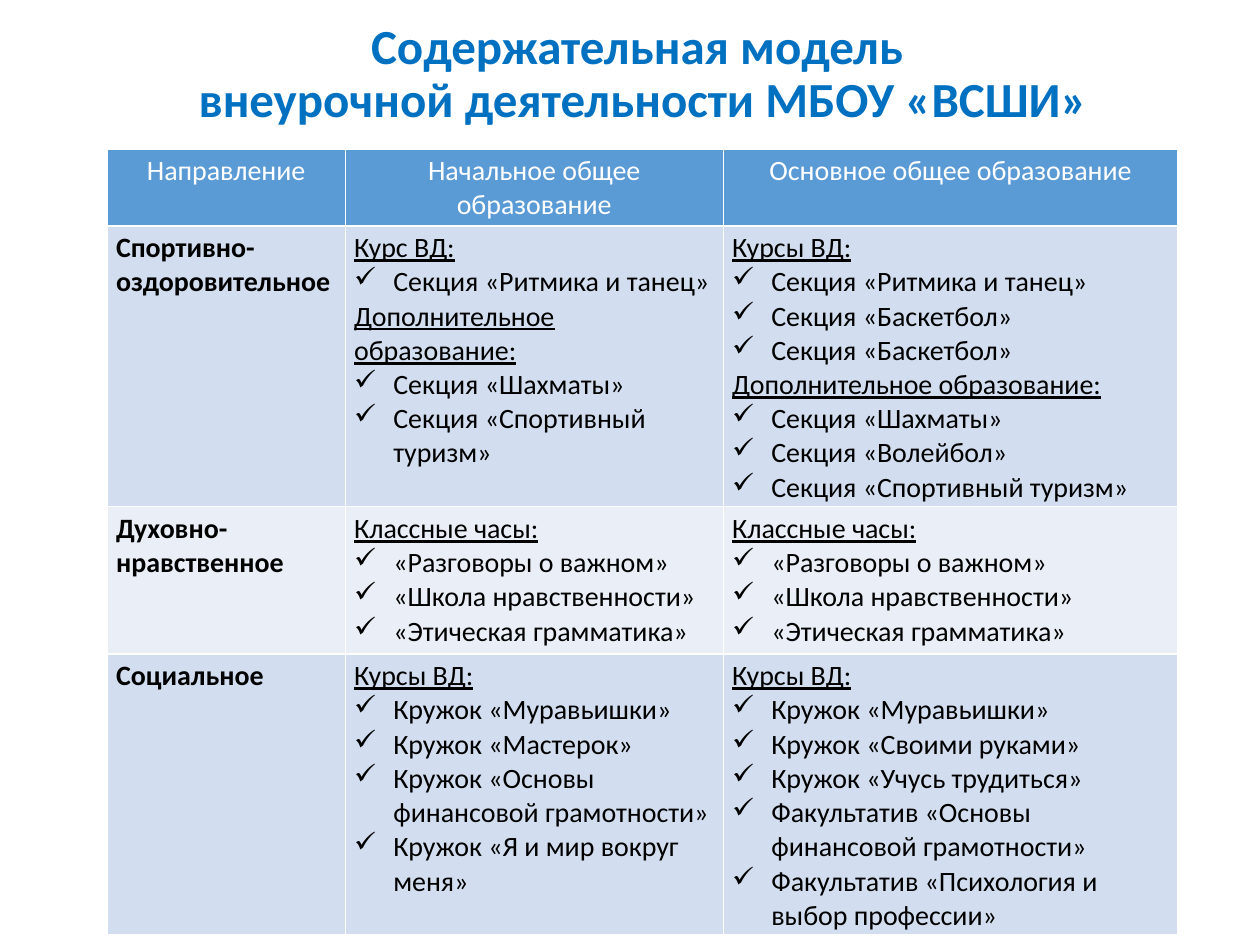
"""Build the slide with the table of extracurricular activities by school level."""

from dataclasses import dataclass, field

import lxml.etree
import pptx
import pptx.dml.color
import pptx.enum.text
import pptx.oxml.ns
import pptx.slide
import pptx.table
import pptx.text.text
import pptx.util

Cm = pptx.util.Cm
Align = pptx.enum.text.PP_ALIGN


@dataclass(frozen=True)
class Theme:
    font: str = "Calibri"
    title_size: int = 28
    table_size: int = 16
    title: str = "0070C0"
    header_text: str = "FFFFFF"
    text: str = "000000"
    header_fill: str = "5B9BD5"
    band_fills: tuple[str, str] = ("D2DEEF", "EAEFF7")


@dataclass(frozen=True)
class Group:
    heading: str
    items: list[str] = field(default_factory=list)


@dataclass(frozen=True)
class Direction:
    name: str
    height: float
    primary: list[Group]
    secondary: list[Group]


THEME = Theme()
TITLE_LINES = ["Содержательная модель ", "внеурочной деятельности МБОУ «ВСШИ»"]
HEADERS = ["Направление", "Начальное общее образование", "Основное общее образование"]
COLUMN_WIDTHS = [4.8, 7.62, 9.17]
HEADER_HEIGHT = 1.03
INDENT = 0.79
CLASS_HOURS = [
    Group("Классные часы:", ["«Разговоры о важном»", "«Школа нравственности»", "«Этическая грамматика»"]),
]
DIRECTIONS = [
    Direction(
        "Спортивно-оздоровительное",
        5.66,
        [
            Group("Курс ВД:", ["Секция «Ритмика и танец»"]),
            Group("Дополнительное образование:", ["Секция «Шахматы»", "Секция «Спортивный туризм»"]),
        ],
        [
            Group("Курсы ВД:", ["Секция «Ритмика и танец»", "Секция «Баскетбол»", "Секция «Баскетбол»"]),
            Group(
                "Дополнительное образование:",
                ["Секция «Шахматы»", "Секция «Волейбол»", "Секция «Спортивный туризм»"],
            ),
        ],
    ),
    Direction("Духовно-нравственное", 2.97, CLASS_HOURS, CLASS_HOURS),
    Direction(
        "Социальное",
        5.66,
        [
            Group(
                "Курсы ВД:",
                [
                    "Кружок «Муравьишки»",
                    "Кружок «Мастерок»",
                    "Кружок «Основы финансовой грамотности»",
                    "Кружок «Я и мир вокруг меня»",
                ],
            ),
        ],
        [
            Group(
                "Курсы ВД:",
                [
                    "Кружок «Муравьишки»",
                    "Кружок «Своими руками»",
                    "Кружок «Учусь трудиться»",
                    "Факультатив «Основы финансовой грамотности»",
                    "Факультатив «Психология и выбор профессии»",
                ],
            ),
        ],
    ),
]


def add_span(
    para: pptx.text.text._Paragraph,
    text: str,
    color: str = THEME.text,
    size: int = THEME.table_size,
    bold: bool = False,
    underline: bool = False,
) -> None:
    """Add one formatted run to a paragraph."""
    span = para.add_run()
    span.text = text
    span.font.name = THEME.font
    span.font.size = pptx.util.Pt(size)
    span.font.bold = bold
    span.font.underline = underline
    span.font.color.rgb = pptx.dml.color.RGBColor.from_string(color)


def add_check_mark(para: pptx.text.text._Paragraph) -> None:
    """Give a paragraph a hanging check mark bullet."""
    properties = para._p.get_or_add_pPr()
    properties.set("marL", str(Cm(INDENT)))
    properties.set("indent", str(-Cm(INDENT)))
    bullet = lxml.etree.SubElement(properties, pptx.oxml.ns.qn("a:buChar"))
    bullet.set("char", "✓")


def style_cell(cell: pptx.table._Cell, fill: str) -> None:
    """Set the fill and margins of a cell."""
    cell.fill.solid()
    cell.fill.fore_color.rgb = pptx.dml.color.RGBColor.from_string(fill)
    cell.margin_left = cell.margin_right = Cm(0.18)
    cell.margin_top = cell.margin_bottom = Cm(0.1)


def fill_groups(cell: pptx.table._Cell, groups: list[Group]) -> None:
    """Write underlined headings, each followed by its checked items."""
    frame = cell.text_frame
    for number, group in enumerate(groups):
        para = frame.add_paragraph() if number else frame.paragraphs[0]
        add_span(para, group.heading, underline=True)
        for item in group.items:
            para = frame.add_paragraph()
            add_check_mark(para)
            add_span(para, item)


def add_title(page: pptx.slide.Slide) -> None:
    """Add the two-line centred title."""
    box = page.shapes.add_textbox(Cm(3.05), Cm(0.79), Cm(19.81), Cm(1.45))
    frame = box.text_frame
    frame.word_wrap = True
    frame.vertical_anchor = pptx.enum.text.MSO_ANCHOR.MIDDLE
    para = frame.paragraphs[0]
    para.alignment = Align.CENTER
    para.line_spacing = 0.9
    for number, line in enumerate(TITLE_LINES):
        if number:
            para.add_line_break()
        add_span(para, line, THEME.title, THEME.title_size, bold=True)


def add_activity_table(page: pptx.slide.Slide) -> None:
    """Add the table with a header row and one row per direction."""
    heights = [HEADER_HEIGHT] + [direction.height for direction in DIRECTIONS]
    table = page.shapes.add_table(
        len(heights), len(HEADERS), Cm(2.16), Cm(3), Cm(sum(COLUMN_WIDTHS)), Cm(sum(heights))
    ).table
    for column, width in zip(table.columns, COLUMN_WIDTHS):
        column.width = Cm(width)
    for row, height in zip(table.rows, heights):
        row.height = Cm(height)
    for index, header in enumerate(HEADERS):
        cell = table.cell(0, index)
        style_cell(cell, THEME.header_fill)
        para = cell.text_frame.paragraphs[0]
        para.alignment = Align.CENTER
        add_span(para, header, THEME.header_text)
    for index, direction in enumerate(DIRECTIONS):
        cells = table.rows[index + 1].cells
        for cell in cells:
            style_cell(cell, THEME.band_fills[index % 2])
        name, primary, secondary = cells
        add_span(name.text_frame.paragraphs[0], direction.name, bold=True)
        fill_groups(primary, direction.primary)
        fill_groups(secondary, direction.secondary)


def main() -> None:
    """Create and save the deck."""
    deck = pptx.Presentation()
    deck.slide_width, deck.slide_height = Cm(25.4), Cm(19.05)
    page = deck.slides.add_slide(deck.slide_layouts[6])
    add_title(page)
    add_activity_table(page)
    deck.save("out.pptx")


if __name__ == "__main__":
    main()
